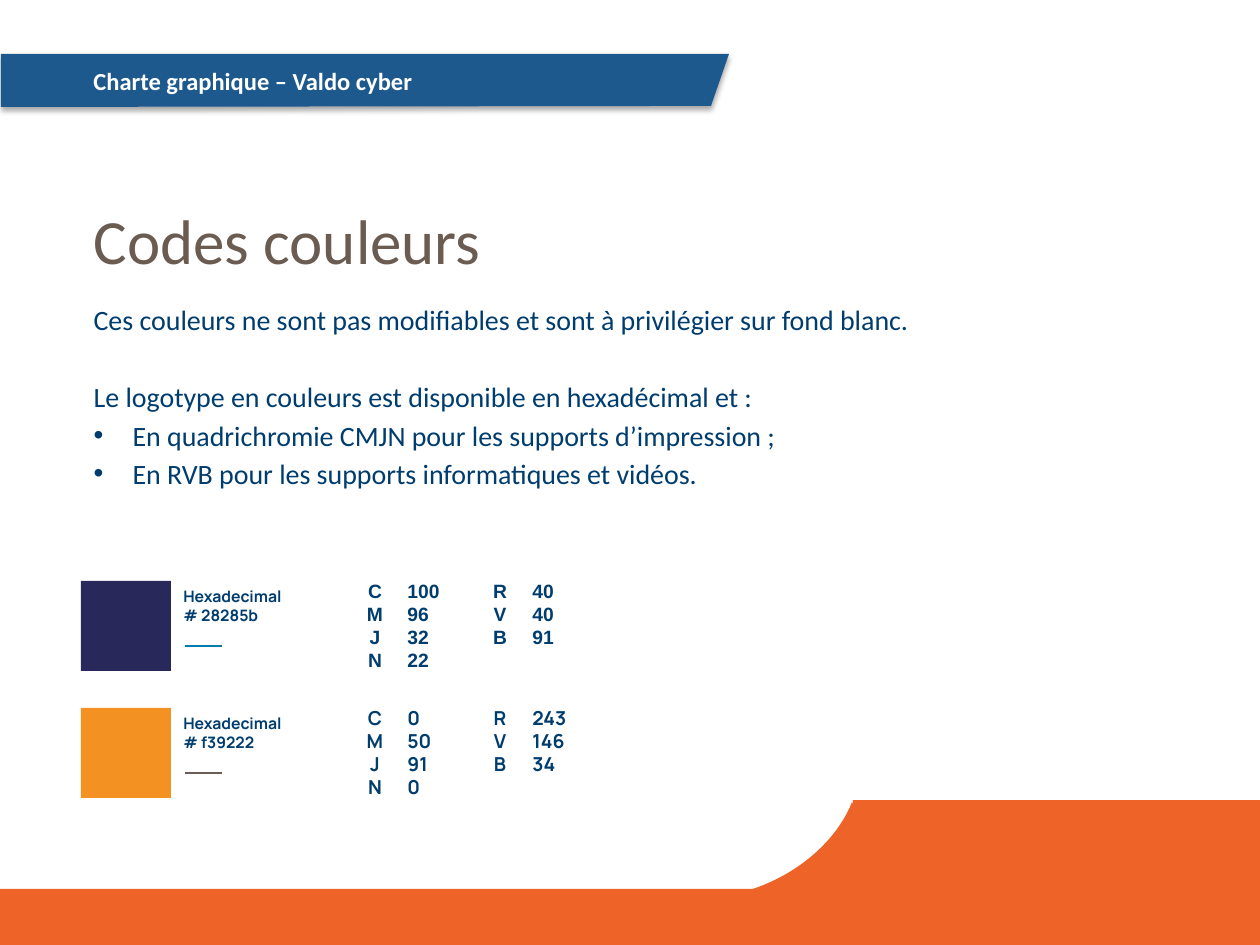
from lxml.etree import SubElement
from pptx import Presentation
from pptx.dml.color import RGBColor
from pptx.enum.shapes import MSO_CONNECTOR as Link, MSO_SHAPE as Kind
from pptx.enum.text import MSO_ANCHOR as Anchor, MSO_AUTO_SIZE as Fit, PP_ALIGN as Align
from pptx.oxml.ns import qn
from pptx.util import Pt

# Content
BANNER = "Charte graphique – Valdo cyber"
TITLE = "Codes couleurs"
# text, bulleted, space before in points
BODY = [
    ("Ces couleurs ne sont pas modifiables et sont à privilégier sur fond blanc.", False, 0),
    ("Le logotype en couleurs est disponible en hexadécimal et :", False, 25),
    ("En quadrichromie CMJN pour les supports d’impression ;", True, 2.8),
    ("En RVB pour les supports informatiques et vidéos.", True, 2.8),
]
SWATCHES = [
    {"hex": "28285b", "rule": "027BB1", "font": "Arial",
     "cmyk": [100, 96, 32, 22], "rgb": [40, 40, 91]},
    {"hex": "f39222", "rule": "6A5D58", "font": "Manrope",
     "cmyk": [0, 50, 91, 0], "rgb": [243, 146, 34]},
]


class Theme:
    orange, blue, navy = "EE6327", "1E598E", "003D6F"
    brown, white, black = "6B5C51", "FFFFFF", "000000"
    font, label = "Calibri", "Manrope"
    title, body, banner, code, hex = 36, 16, 14, 11, 9


# Layout in px, 126 to the inch
PX = 914400 / 126
WIDE, HIGH = 1260, 945
LEFT = 81
FIRST, STEP, SIDE = 581, 127, 90
FOOTER = [  # preset, box, turn
    (Kind.RECTANGLE, (0, 889, WIDE, 56), 0),
    (Kind.RECTANGLE, (853, 800, WIDE - 853, 145), 0),
    (Kind.RECTANGLE, (827, 843, 53, 58), 0),
    (Kind.MOON, (733, 775, 77, 213), 245.2),
]


def emu(*vals):
    return [round(v * PX) for v in vals]


def rgb(code):
    return RGBColor.from_string(code.upper())


def paint(shape, color):
    shape.shadow.inherit = False
    shape.fill.solid()
    shape.fill.fore_color.rgb = rgb(color)
    shape.line.fill.background()


def style(par, size, color, name=Theme.font, bold=False):
    for run in par.runs:
        font = run.font
        font.size, font.name, font.bold = Pt(size), name, bold
        font.color.rgb = rgb(color)


def place(shape, *box):
    shape.left, shape.top, shape.width, shape.height = emu(*box)


def label(home, box, lines, size, name, color=Theme.navy, align=Align.LEFT):
    frame = home.add_textbox(*emu(*box)).text_frame
    frame.word_wrap = True
    frame.auto_size = Fit.SHAPE_TO_FIT_TEXT
    frame.text = "\n".join(str(line) for line in lines)
    for par in frame.paragraphs:
        par.alignment = align
        style(par, size, color, name, True)


def bullet(par, on):
    props = par._p.get_or_add_pPr()
    gap = round(39 * PX) if on else 0
    props.set("marL", str(gap))
    props.set("indent", str(-gap))
    if on:
        SubElement(props, qn("a:buFont"), typeface="Arial")
        SubElement(props, qn("a:buChar"), char="•")
    else:
        SubElement(props, qn("a:buNone"))


def shade(shape):
    effects = shape._element.spPr.find(qn("a:effectLst"))
    outer = SubElement(effects, qn("a:outerShdw"), blurRad=str(Pt(3.1)),
                       dist=str(Pt(1.8)), dir="5400000", rotWithShape="0")
    color = SubElement(outer, qn("a:srgbClr"), val=Theme.black)
    SubElement(color, qn("a:alpha"), val="35000")


def swatch(shapes, item, top):
    group = shapes.add_group_shape().shapes
    paint(group.add_shape(Kind.RECTANGLE, *emu(LEFT, top, SIDE, SIDE)), item["hex"])
    label(group, (171, top, 137, 50), ["Hexadecimal", "# " + item["hex"]],
          Theme.hex, Theme.label)
    rule = group.add_connector(Link.STRAIGHT, *emu(222, top + 65, 185, top + 65))
    rule.line.color.rgb = rgb(item["rule"])
    rule.line.width = Pt(1)
    SubElement(rule._element.spPr, qn("a:effectLst"))
    # Letters and values of each colour model
    for left, letters, vals in ((353, "CMJN", item["cmyk"]), (478, "RVB", item["rgb"])):
        high = 14 + 23 * len(vals)
        label(group, (left, top - 8, 44, high), letters, Theme.code,
              item["font"], align=Align.CENTER)
        label(group, (left + 42, top - 8, 65, high), vals, Theme.code, item["font"])


def main():
    deck = Presentation()
    deck.slide_width, deck.slide_height = emu(WIDE, HIGH)
    slide = deck.slides.add_slide(deck.slide_layouts[1])
    shapes = slide.shapes
    title, body = slide.placeholders

    # Footer
    for kind, box, turn in FOOTER:
        part = shapes.add_shape(kind, *emu(*box))
        part.rotation = turn
        paint(part, Theme.orange)

    # Banner
    path = shapes.build_freeform(1, 54, scale=PX)
    path.add_line_segments([(729, 54), (711, 106), (1, 107)], close=True)
    band = path.convert_to_shape()
    paint(band, Theme.blue)
    shade(band)
    label(shapes, (LEFT, 60, 625, 43), [BANNER], Theme.banner, Theme.font, Theme.white)

    # Title
    place(title, LEFT, 183, 1116, 112)
    frame = title.text_frame
    frame.text = TITLE
    frame.auto_size, frame.vertical_anchor = Fit.NONE, Anchor.MIDDLE
    frame.paragraphs[0].alignment = Align.LEFT
    style(frame.paragraphs[0], Theme.title, Theme.brown)

    # Body
    place(body, LEFT, 296, 1116, 219)
    frame = body.text_frame
    frame.text = "\n".join(text for text, _, _ in BODY)
    frame.auto_size, frame.vertical_anchor = Fit.NONE, Anchor.TOP
    for par, (_, dot, gap) in zip(frame.paragraphs, BODY):
        par.space_before = Pt(gap)
        bullet(par, dot)
        style(par, Theme.body, Theme.navy)

    # Colour codes
    for row, item in enumerate(SWATCHES):
        swatch(shapes, item, FIRST + row * STEP)

    deck.save("out.pptx")


if __name__ == "__main__":
    main()
